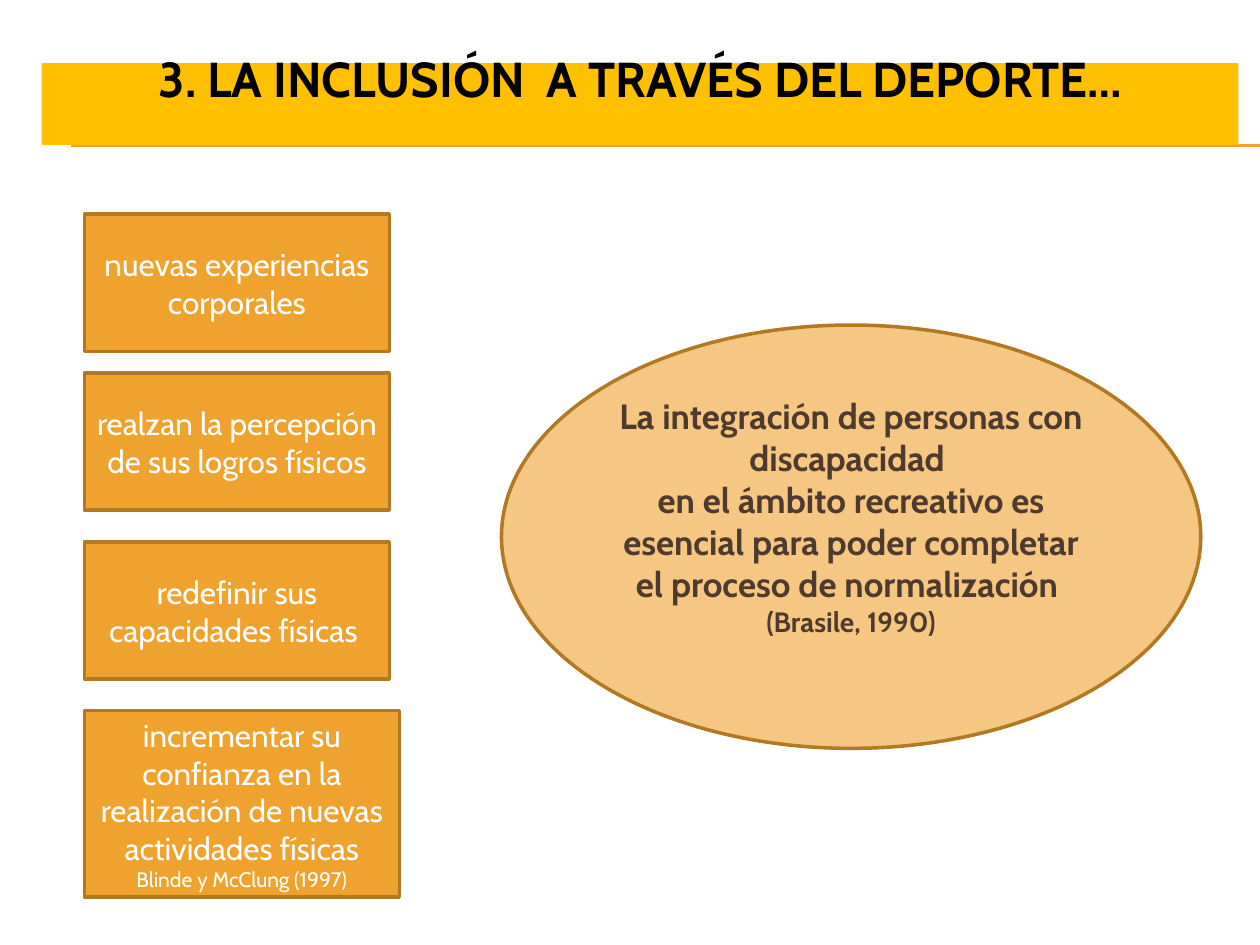
from dataclasses import dataclass

from lxml.etree import SubElement
from pptx import Presentation
from pptx.dml.color import RGBColor
from pptx.enum.shapes import MSO_CONNECTOR, MSO_SHAPE
from pptx.enum.text import MSO_ANCHOR, PP_ALIGN
from pptx.oxml.ns import qn
from pptx.util import Inches, Pt


@dataclass(frozen=True)
class Theme:
    font: str = "Cabin"
    band: str = "FFC000"
    orange: str = "F0A22E"
    light_orange: str = "F6C782"
    outline: str = "B27822"
    black: str = "000000"
    white: str = "FFFFFF"
    brown: str = "4E3B30"
    title_size: int = 28
    quote_size: int = 20
    body_size: int = 18
    quote_source_size: int = 16
    source_size: int = 12
    outline_width: float = 2
    rule_width: float = 0.75


COLUMNS, ROWS = 100, 75


def add_paragraph(frame, text, *, font, size, color, bold=False, first=False):
    paragraph = frame.paragraphs[0] if first else frame.add_paragraph()
    paragraph.alignment = PP_ALIGN.CENTER
    run = paragraph.add_run()
    run.text = text
    run.font.name = font
    run.font.size = Pt(size)
    run.font.bold = bold
    run.font.color.rgb = RGBColor.from_string(color)


class SlideBuilder:
    """Draws on one slide; lengths are columns and rows of the grid."""

    def __init__(self, presentation, theme):
        self.theme = theme
        self.slide = presentation.slides.add_slide(presentation.slide_layouts[6])
        self.column = presentation.slide_width / COLUMNS
        self.row = presentation.slide_height / ROWS

    def place(self, left, top, width, height):
        return (round(left * self.column), round(top * self.row),
                round(width * self.column), round(height * self.row))

    def rule(self, left, right, row):
        start_x, y, end_x, _ = self.place(left, row, right, 0)
        connector = self.slide.shapes.add_connector(
            MSO_CONNECTOR.STRAIGHT, start_x, y, end_x, y)
        connector.line.color.rgb = RGBColor.from_string(self.theme.orange)
        connector.line.width = Pt(self.theme.rule_width)
        SubElement(connector.element.spPr, qn("a:effectLst"))

    def panel(self, kind, area, fill, lines, *, color, bold=False, outline=True,
              anchor=MSO_ANCHOR.MIDDLE, bottom_rows=0.5):
        """Add a filled shape; lines holds pairs of text and type size."""
        shape = self.slide.shapes.add_shape(kind, *self.place(*area))
        shape.shadow.inherit = False
        shape.fill.solid()
        shape.fill.fore_color.rgb = RGBColor.from_string(fill)
        if outline:
            shape.line.color.rgb = RGBColor.from_string(self.theme.outline)
            shape.line.width = Pt(self.theme.outline_width)
        else:
            shape.line.fill.background()
        frame = shape.text_frame
        frame.word_wrap = True
        frame.vertical_anchor = anchor
        frame.margin_bottom = round(bottom_rows * self.row)
        for index, (text, size) in enumerate(lines):
            add_paragraph(frame, text, font=self.theme.font, size=size,
                          color=color, bold=bold, first=index == 0)

    def title(self, text):
        self.panel(MSO_SHAPE.RECTANGLE, (3.3, 5, 95, 6.5), self.theme.band,
                   [(text, self.theme.title_size)], color=self.theme.black,
                   bold=True, outline=False, anchor=MSO_ANCHOR.BOTTOM, bottom_rows=3)

    def benefit(self, top, text, *, source=None, width=24.2, height=10.9):
        lines = [(text, self.theme.body_size)]
        if source:
            lines.append((source, self.theme.source_size))
        self.panel(MSO_SHAPE.RECTANGLE, (6.7, top, width, height),
                   self.theme.orange, lines, color=self.theme.white)

    def quote(self, area, texts, source):
        lines = [(text, self.theme.quote_size) for text in texts]
        lines.append((source, self.theme.quote_source_size))
        self.panel(MSO_SHAPE.OVAL, area, self.theme.light_orange, lines,
                   color=self.theme.brown, bold=True, bottom_rows=3.8)


def main():
    presentation = Presentation()
    presentation.slide_width = Inches(10)
    presentation.slide_height = Inches(7.5)
    builder = SlideBuilder(presentation, Theme())

    for row in (11.5, 11.6):
        builder.rule(5.6, COLUMNS, row)
    builder.title("3. LA INCLUSIÓN  A TRAVÉS DEL DEPORTE…")

    builder.benefit(17, "nuevas experiencias corporales")
    builder.benefit(29.6, "realzan la percepción de sus logros físicos")
    builder.benefit(43, "redefinir sus capacidades físicas ")
    builder.benefit(
        56.4, "incrementar su confianza en la realización de nuevas actividades físicas",
        source="Blinde y McClung (1997)", width=25, height=14.8)

    builder.quote(
        (39.8, 25.8, 55.5, 33.6),
        ["La integración de personas con discapacidad ",
         "en el ámbito recreativo es esencial para poder completar "
         "el proceso de normalización "],
        "(Brasile, 1990)")

    presentation.save("out.pptx")


if __name__ == "__main__":
    main()
